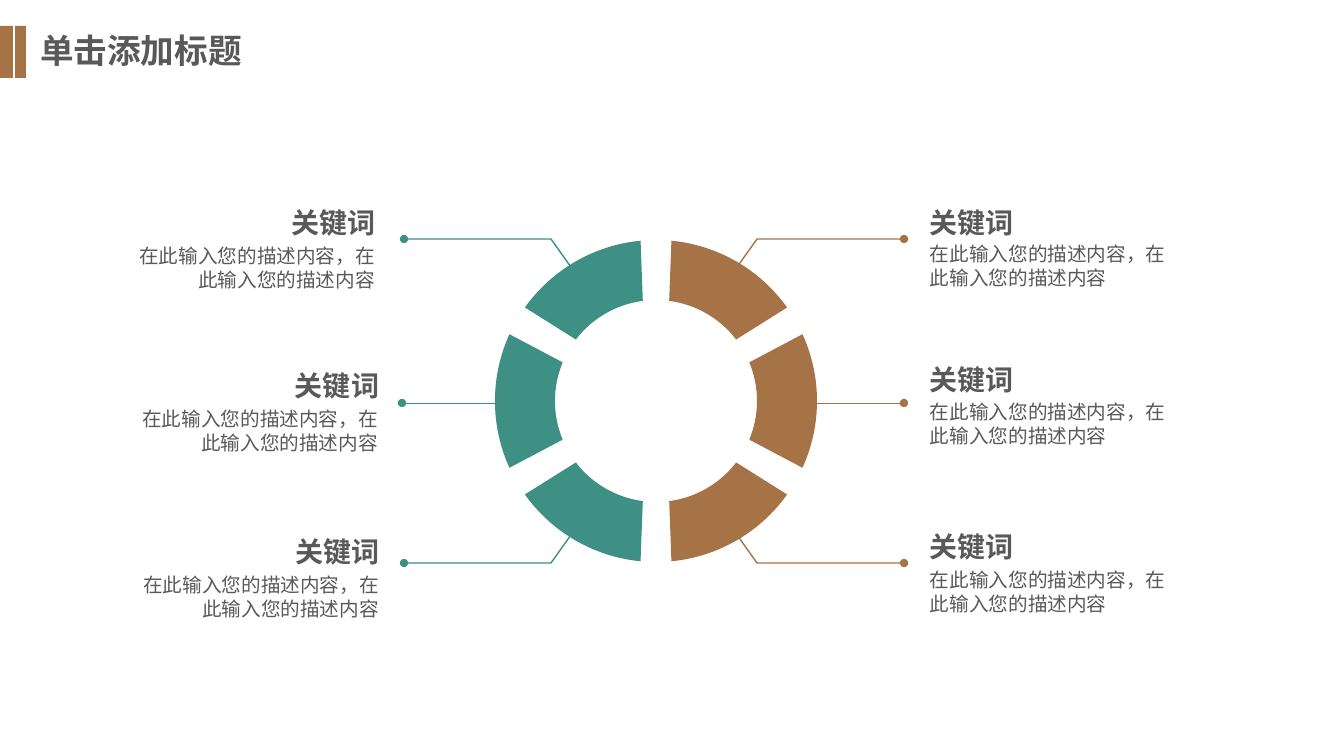
from math import cos, radians, sin, tan

from lxml.etree import SubElement
from pptx import Presentation
from pptx.dml.color import RGBColor
from pptx.enum.shapes import MSO_CONNECTOR as Connector, MSO_SHAPE as Shape
from pptx.enum.text import MSO_ANCHOR as Anchor, MSO_AUTO_SIZE as AutoSize, PP_ALIGN as Align
from pptx.oxml.ns import qn
from pptx.util import Emu, Pt

SLIDE_WIDTH, SLIDE_HEIGHT = 1344, 756
SCALE = 12192000 / SLIDE_WIDTH
FINE = 100
FONT = "Noto Sans CJK SC"
COLORS = {"teal": "3E8F84", "brown": "A67346", "text": "595959"}
KEYWORD = "关键词"
DESCRIPTION = "在此输入您的描述内容，在此输入您的描述内容"


def px(length):
    return Emu(round(length * SCALE))


def color(name):
    return RGBColor.from_string(COLORS[name])


def write(shape, text, size, bold=False, align=Align.LEFT):
    frame = shape.text_frame
    frame.word_wrap = True
    frame.auto_size = AutoSize.SHAPE_TO_FIT_TEXT
    frame.vertical_anchor = Anchor.TOP
    paragraph = frame.paragraphs[0]
    paragraph.alignment = align
    run = paragraph.add_run()
    run.text = text
    run.font.size = Pt(size)
    run.font.bold = bold
    run.font.color.rgb = color("text")
    run.font.name = FONT
    SubElement(run.font._element, qn("a:ea"), typeface=FONT)


def add_text(slide, box, text, size, bold, align):
    write(slide.shapes.add_textbox(*map(px, box)), text, size, bold, align)


def paint(shape, name):
    shape.shadow.inherit = False
    shape.fill.solid()
    shape.fill.fore_color.rgb = color(name)
    shape.line.fill.background()


def add_outline(slide, points, close):
    points = [(x * FINE, y * FINE) for x, y in points]
    builder = slide.shapes.build_freeform(*points[0], scale=SCALE / FINE)
    builder.add_line_segments(points[1:], close=close)
    return builder.convert_to_shape()


def style_leader(leader, name, width):
    leader.line.color.rgb = color(name)
    leader.line.width = Pt(width)
    SubElement(leader.line._get_or_add_ln(), qn("a:tailEnd"), type="oval")


def add_header(slide, left, top, height):
    title = slide.shapes.title
    title.left, title.top, title.width, title.height = map(px, (left + 30, top - 1, 333, 53))
    write(title, "单击添加标题", 24, True)
    for offset, width in ((0, 13), (15, 11)):
        bar = slide.shapes.add_shape(Shape.RECTANGLE, *map(px, (left + offset, top, width, height)))
        paint(bar, "brown")


def add_leaders(slide, axis, middle, side, name):
    for direction in (-1, 1):
        points = [(axis + side * across, middle + direction * down)
                  for across, down in ((81, 131), (103, 162), (250, 162))]
        leader = add_outline(slide, points, False)
        leader.shadow.inherit = False
        leader.fill.background()
        style_leader(leader, name, 1)
    level = middle + 2
    start, end = axis + side * 138 - 1, axis + side * 251 - 1
    leader = slide.shapes.add_connector(Connector.STRAIGHT, *map(px, (start, level, end, level)))
    style_leader(leader, name, 0.5)
    SubElement(leader._element.spPr, qn("a:effectLst"))


def arc(center, radius, half_angle):
    points = []
    reach = radius * tan(radians(half_angle) / 4) * 4 / 3
    for angle in map(radians, (-half_angle, 0, half_angle)):
        x, y = center[0] + radius * sin(angle), center[1] - radius * cos(angle)
        before = (x - reach * cos(angle), y - reach * sin(angle))
        after = (x + reach * cos(angle), y + reach * sin(angle))
        points += [before, (x, y), after]
    return points[1:-1]


def curve(shape):
    outline = shape._element.find(".//" + qn("a:path"))
    lines = outline.findall(qn("a:lnTo"))
    for first in (0, 3, 7, 10):
        bezier = SubElement(outline, qn("a:cubicBezTo"))
        lines[first].addprevious(bezier)
        for line in lines[first:first + 3]:
            bezier.append(line[0])
            outline.remove(line)


def add_ring(slide, center, outer, inner):
    points = arc(center, outer, 24.5) + arc(center, inner, 22.5)[::-1]
    for angle in range(30, 360, 60):
        segment = add_outline(slide, points, True)
        curve(segment)
        paint(segment, "brown" if angle < 180 else "teal")
        distance = px(center[1]) - segment.top - segment.height / 2
        segment.left += round(distance * sin(radians(angle)))
        segment.top += round(distance * (1 - cos(radians(angle))))
        segment.rotation = angle


def add_callout(slide, edge, top, body_top, align):
    for shift, box_top, width, height, text, size, bold in (
            (1, top, 113, 44, KEYWORD, 20, True),
            (0, body_top, 260, 58, DESCRIPTION, 14, False)):
        left = edge + shift - width if align == Align.RIGHT else edge
        add_text(slide, (left, box_top, width, height), text, size, bold, align)


def main():
    presentation = Presentation()
    presentation.slide_width, presentation.slide_height = px(SLIDE_WIDTH), px(SLIDE_HEIGHT)
    slide = presentation.slides.add_slide(presentation.slide_layouts[5])
    add_header(slide, 0, 26, 52)
    for side, name in ((1, "brown"), (-1, "teal")):
        add_leaders(slide, 654, 401, side, name)
    add_ring(slide, (656, 401), 161, 101)
    for edge, top, body_top in ((385, 201, 239), (388, 364, 402), (389, 530, 568)):
        add_callout(slide, edge, top, body_top, Align.RIGHT)
    for top, body_top in ((201, 237), (358, 395), (525, 563)):
        add_callout(slide, 920, top, body_top, Align.LEFT)
    presentation.save("out.pptx")


if __name__ == "__main__":
    main()
